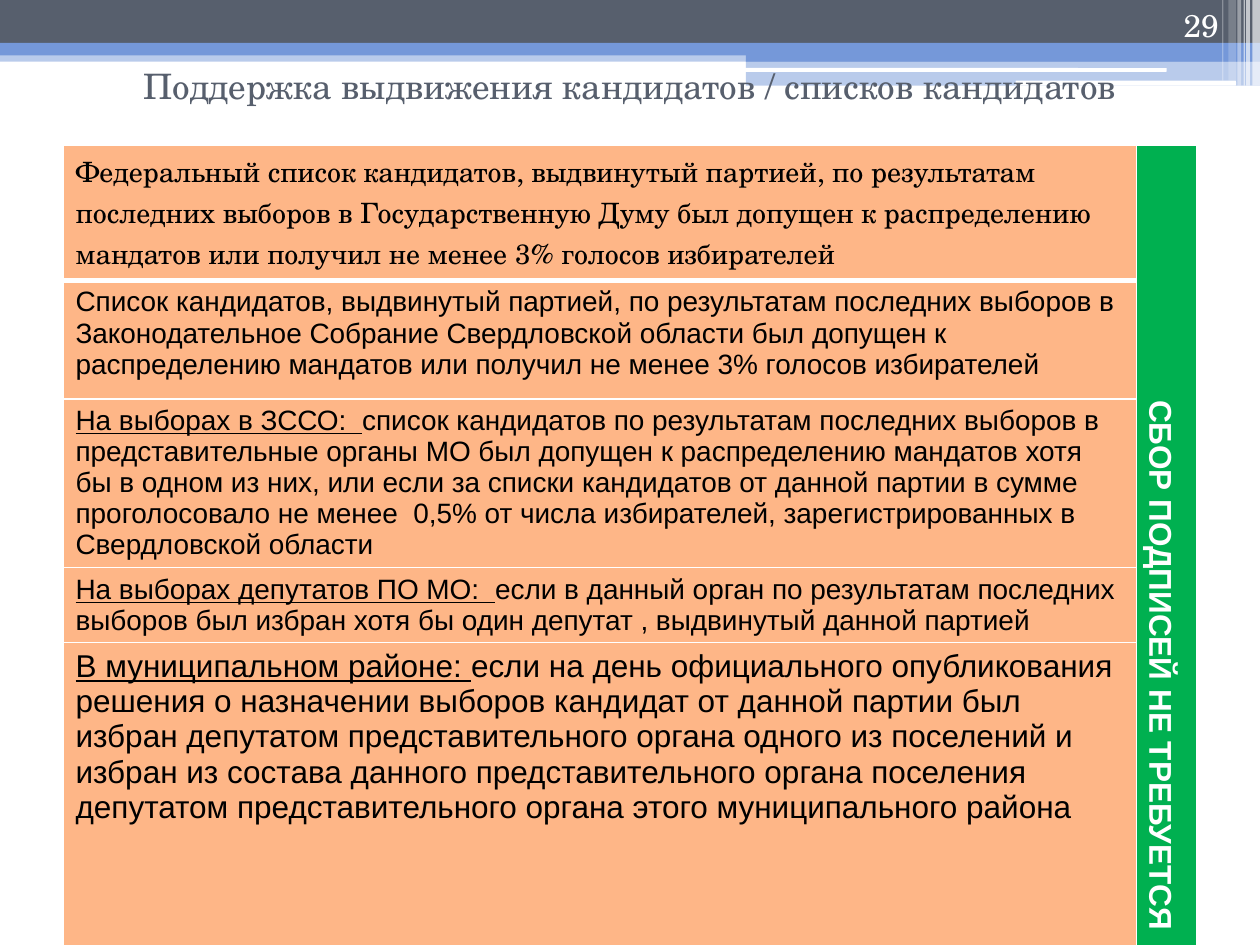
from lxml.etree import SubElement
from pptx import Presentation
from pptx.dml.color import RGBColor
from pptx.enum.shapes import MSO_SHAPE
from pptx.enum.text import MSO_ANCHOR, MSO_AUTO_SIZE, PP_ALIGN
from pptx.oxml import parse_xml
from pptx.oxml.ns import nsdecls, qn
from pptx.util import Inches, Pt

THEME = {
    "slate": "575F6D", "blue": "7598D9", "white": "FFFFFF", "black": "000000",
    "peach": "FEB687", "green": "00B050",
    "serif": "TeX Gyre Schola", "sans": "Arial",
    "head": 20, "big": 18, "text": 16,
}

# Content
TITLE = "Поддержка выдвижения кандидатов / списков кандидатов"
NUMBER = "29"
SIDE = "СБОР ПОДПИСЕЙ НЕ ТРЕБУЕТСЯ"
# underlined lead, text, font, size, row height
ROWS = [
    ("", "Федеральный список кандидатов, выдвинутый партией, по результатам "
     "последних выборов в Государственную Думу был допущен к распределению "
     "мандатов или получил не менее 3% голосов избирателей",
     "serif", "text", 0.94),
    ("", "Список кандидатов, выдвинутый партией, по результатам последних "
     "выборов в Законодательное Собрание Свердловской области был допущен к "
     "распределению мандатов или получил не менее 3% голосов избирателей",
     "sans", "text", 0.94),
    ("На выборах в ЗССО:  ", "список кандидатов по результатам последних "
     "выборов в представительные органы МО был допущен к распределению "
     "мандатов хотя бы в одном из них, или если за списки кандидатов от "
     "данной партии в сумме проголосовало не менее  0,5% от числа "
     "избирателей, зарегистрированных в Свердловской области",
     "sans", "text", 1.34),
    ("На выборах депутатов ПО МО:  ", "если в данный орган по результатам "
     "последних выборов был избран хотя бы один депутат , выдвинутый данной "
     "партией", "sans", "text", 0.59),
    ("В муниципальном районе: ", "если на день официального опубликования "
     "решения о назначении выборов кандидат от данной партии был избран "
     "депутатом представительного органа одного из поселений и избран из "
     "состава данного представительного органа поселения депутатом "
     "представительного органа этого муниципального района",
     "sans", "big", 1.5),
]
COLS = (8.52, 0.48)

# Header decoration: left, top, width, height, colour, opacity
BARS = [
    (0, 0.4, 10, 0.09, "blue", 50),
    (0, 0, 10, 0.34, "slate", 100),
    (0, 0.34, 10, 0.1, "blue", 100),
    (5.92, 0.39, 4.08, 0.1, "blue", 100),
    (5.92, 0.48, 4.08, 0.2, "blue", 50),
]
PILLS = [(5.91, 0.54, 3.35, 0.03), (8.06, 0.64, 1.75, 0.04)]
# left, width, height, opacity
STRIPES = [
    (9.94, 0.06, 0.68, 65), (9.89, 0.03, 0.68, 65), (9.87, 0.01, 0.68, 60),
    (9.82, 0.03, 0.68, 40), (9.75, 0.06, 0.64, 20), (9.7, 0.01, 0.64, 30),
]


def color(name):
    return RGBColor.from_string(THEME[name])


def style(run, font, size, tint, bold=False, line=False):
    run.font.name = THEME[font]
    run.font.size = Pt(THEME[size])
    run.font.color.rgb = color(tint)
    run.font.bold = bold
    run.font.underline = line


def add_bar(slide, box, tint, alpha=100, kind=MSO_SHAPE.RECTANGLE):
    bar = slide.shapes.add_shape(kind, *map(Inches, box))
    bar.shadow.inherit = False
    bar.line.fill.background()
    bar.fill.solid()
    bar.fill.fore_color.rgb = color(tint)
    if alpha < 100:
        mark = bar.fill._xPr.find(qn("a:solidFill"))[0]
        SubElement(mark, qn("a:alpha")).set("val", str(alpha * 1000))


def paint(cell, tint, top=1, low=1):
    props = cell._tc.get_or_add_tcPr()
    sides = (("L", 1), ("R", 1), ("T", top), ("B", low))
    for spot, (side, width) in enumerate(sides):
        props.insert(spot, parse_xml(
            f'<a:ln{side} {nsdecls("a")} w="{Pt(width)}"><a:solidFill>'
            f'<a:srgbClr val="{THEME["white"]}"/></a:solidFill></a:ln{side}>'))
    cell.fill.solid()
    cell.fill.fore_color.rgb = color(tint)


deck = Presentation()
deck.slide_width, deck.slide_height = Inches(10), Inches(7.5)
slide = deck.slides.add_slide(deck.slide_layouts[5])

# Header band
for *box, tint, alpha in BARS:
    add_bar(slide, box, tint, alpha)
for box in PILLS:
    add_bar(slide, box, "white", kind=MSO_SHAPE.ROUNDED_RECTANGLE)
for left, width, height, alpha in STRIPES:
    add_bar(slide, (left, 0, width, height), "white", alpha)

# Title, raised above the band's lower edge by its bottom inset
title = slide.shapes.title
title.left, title.top, title.width, title.height = map(
    Inches, (0.5, 0.6, 9, 0.55))
slide.shapes._spTree.append(title._element)
frame = title.text_frame
frame.text = TITLE
frame.auto_size = MSO_AUTO_SIZE.NONE
frame.vertical_anchor = MSO_ANCHOR.MIDDLE
frame.margin_bottom = Inches(0.45)
frame.paragraphs[0].alignment = PP_ALIGN.CENTER
style(frame.paragraphs[0].runs[0], "serif", "head", "slate")

# Table
high = sum(row[-1] for row in ROWS)
table = slide.shapes.add_table(
    len(ROWS), len(COLS), Inches(0.5), Inches(1.15),
    Inches(sum(COLS)), Inches(high)).table
for col, width in zip(table.columns, COLS):
    col.width = Inches(width)
for i, (lead, text, font, size, height) in enumerate(ROWS):
    table.rows[i].height = Inches(height)
    cell = table.cell(i, 0)
    para = cell.text_frame.paragraphs[0]
    for words, line in ((lead, True), (text, False)):
        if words:
            run = para.add_run()
            run.text = words
            style(run, font, size, "black", line=line)
    paint(cell, "peach", top=3 if i == 1 else 1, low=3 if i == 0 else 1)

# Vertical side cell
side = table.cell(0, 1)
side.merge(table.cell(len(ROWS) - 1, 1))
side.text_frame.text = SIDE
para = side.text_frame.paragraphs[0]
para.alignment = PP_ALIGN.CENTER
style(para.runs[0], "sans", "big", "white", bold=True)
paint(side, "green")
side._tc.get_or_add_tcPr().set("vert", "vert")

# Slide number
box = slide.shapes.add_textbox(*map(Inches, (8.94, 0, 0.83, 0.4)))
frame = box.text_frame
frame.word_wrap = True
frame.vertical_anchor = MSO_ANCHOR.BOTTOM
frame.text = NUMBER
frame.paragraphs[0].alignment = PP_ALIGN.RIGHT
style(frame.paragraphs[0].runs[0], "serif", "big", "white")

deck.save("out.pptx")
